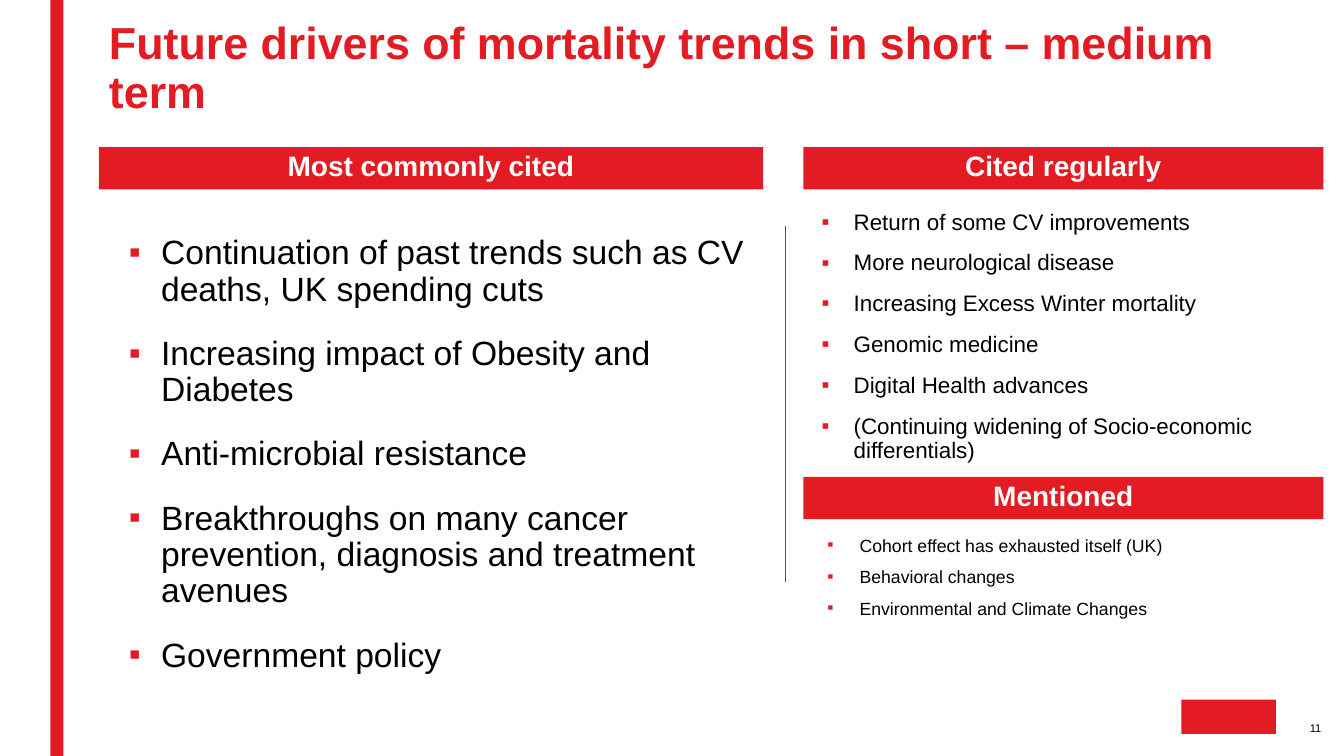
"""Build the slide on future drivers of mortality trends."""
from lxml.etree import SubElement
from pptx import Presentation
from pptx.dml.color import RGBColor
from pptx.enum.shapes import MSO_CONNECTOR, MSO_SHAPE
from pptx.enum.text import MSO_ANCHOR, MSO_AUTO_SIZE, PP_ALIGN
from pptx.oxml.ns import qn
from pptx.util import Pt

RED = RGBColor(0xE3, 0x1B, 0x23)
RULE = RGBColor(0xE3, 0x16, 0x1E)
BLACK = RGBColor(0, 0, 0)
WHITE = RGBColor(0xFF, 0xFF, 0xFF)
FONT = "Arial"
INDENT = 23

TITLE = "Future drivers of mortality trends in short – medium term"
NUMBER = "11"
LEFT, RIGHT = (70.6, 474.5), (573.8, 371.5)
BAR_H = 30.2
HEADS = [
    ("Most commonly cited", LEFT, 105.1),
    ("Cited regularly", RIGHT, 105.1),
    ("Mentioned", RIGHT, 340.6),
]
REGULAR = {
    "box": (579.6, 146.9, 357.1, 165.6), "size": 16, "line": 0.9, "gap": 12,
    "items": [
        "Return of some CV improvements",
        "More neurological disease",
        "Increasing Excess Winter mortality",
        "Genomic medicine",
        "Digital Health advances",
        "(Continuing widening of Socio-economic differentials)",
    ],
}
COMMON = {
    "box": (85, 164.9, 474.5, 326.9), "size": 24, "line": 0.9, "gap": 20,
    "items": [
        "Continuation of past trends such as CV deaths, UK spending cuts",
        "Increasing impact of Obesity and Diabetes",
        "Anti-microbial resistance",
        "Breakthroughs on many cancer prevention, diagnosis and treatment avenues",
        "Government policy",
    ],
}
MENTIONED = {
    "box": (583.9, 382.3, 332.6, 65.5), "size": 12.6, "line": 0.7, "gap": 12,
    "items": [
        "Cohort effect has exhausted itself (UK)",
        "Behavioral changes",
        "Environmental and Climate Changes",
    ],
}


def points(box):
    return [Pt(side) for side in box]


def place(shape, box):
    shape.left, shape.top, shape.width, shape.height = points(box)


def style(para, size, color, bold=False, align=PP_ALIGN.LEFT, line=0.9, gap=0):
    para.alignment = align
    para.line_spacing = line
    para.space_before = Pt(gap)
    para.space_after = Pt(0)
    for run in para.runs:
        font = run.font
        font.name, font.size, font.bold = FONT, Pt(size), bold
        font.color.rgb = color


def bullet(para):
    props = para._p.get_or_add_pPr()
    props.set("marL", str(Pt(INDENT)))
    props.set("indent", str(-Pt(INDENT)))
    tint = SubElement(props, qn("a:buClr"))
    SubElement(tint, qn("a:srgbClr"), val=str(RED))
    SubElement(props, qn("a:buFont"), typeface=FONT)
    SubElement(props, qn("a:buChar"), char="▪")


def fill_list(shape, group):
    frame = shape.text_frame
    frame.text = "\n".join(group["items"])
    frame.word_wrap = True
    frame.auto_size = MSO_AUTO_SIZE.NONE
    frame.vertical_anchor = MSO_ANCHOR.TOP
    for i, para in enumerate(frame.paragraphs):
        bullet(para)
        style(para, group["size"], BLACK, line=group["line"],
              gap=group["gap"] if i else 0)


def add_block(slide, box):
    block = slide.shapes.add_shape(MSO_SHAPE.RECTANGLE, *points(box))
    block.shadow.inherit = False
    block.fill.solid()
    block.fill.fore_color.rgb = RED
    block.line.fill.background()
    return block


def add_title(slide):
    title = slide.shapes.title
    place(title, (70.6, 0, 841.7, 87.8))
    frame = title.text_frame
    frame.text = TITLE
    frame.word_wrap = True
    frame.auto_size = MSO_AUTO_SIZE.NONE
    frame.vertical_anchor = MSO_ANCHOR.BOTTOM
    style(frame.paragraphs[0], 32, RED, bold=True)


def add_rule(slide):
    rule = slide.shapes.add_connector(
        MSO_CONNECTOR.STRAIGHT, *points((560.9, 161.3, 560.9, 415.4)))
    rule.line.color.rgb = RULE
    rule.line.width = Pt(0.75)
    SubElement(rule._element.spPr, qn("a:effectLst"))


def add_number(slide):
    frame = slide.shapes.add_textbox(*points((897.8, 515.5, 46.1, 9.4))).text_frame
    frame.text = NUMBER
    frame.word_wrap = True
    frame.vertical_anchor = MSO_ANCHOR.BOTTOM
    frame.margin_left = frame.margin_right = Pt(0)
    frame.margin_top = frame.margin_bottom = Pt(0)
    style(frame.paragraphs[0], 8, BLACK, align=PP_ALIGN.RIGHT)


def main():
    deck = Presentation()
    deck.slide_width, deck.slide_height = Pt(960), Pt(540)
    slide = deck.slides.add_slide(deck.slide_layouts[1])
    add_title(slide)
    body = slide.placeholders[1]
    place(body, REGULAR["box"])
    fill_list(body, REGULAR)
    add_block(slide, (36, 0, 9.4, 540))
    add_block(slide, (843.8, 499.7, 67.7, 24.5))
    add_number(slide)
    add_rule(slide)
    for text, (left, width), top in HEADS:
        frame = add_block(slide, (left, top, width, BAR_H)).text_frame
        frame.text = text
        frame.vertical_anchor = MSO_ANCHOR.TOP
        style(frame.paragraphs[0], 20, WHITE, bold=True, align=PP_ALIGN.CENTER)
    for group in (COMMON, MENTIONED):
        fill_list(slide.shapes.add_textbox(*points(group["box"])), group)
    deck.save("out.pptx")


if __name__ == "__main__":
    main()
